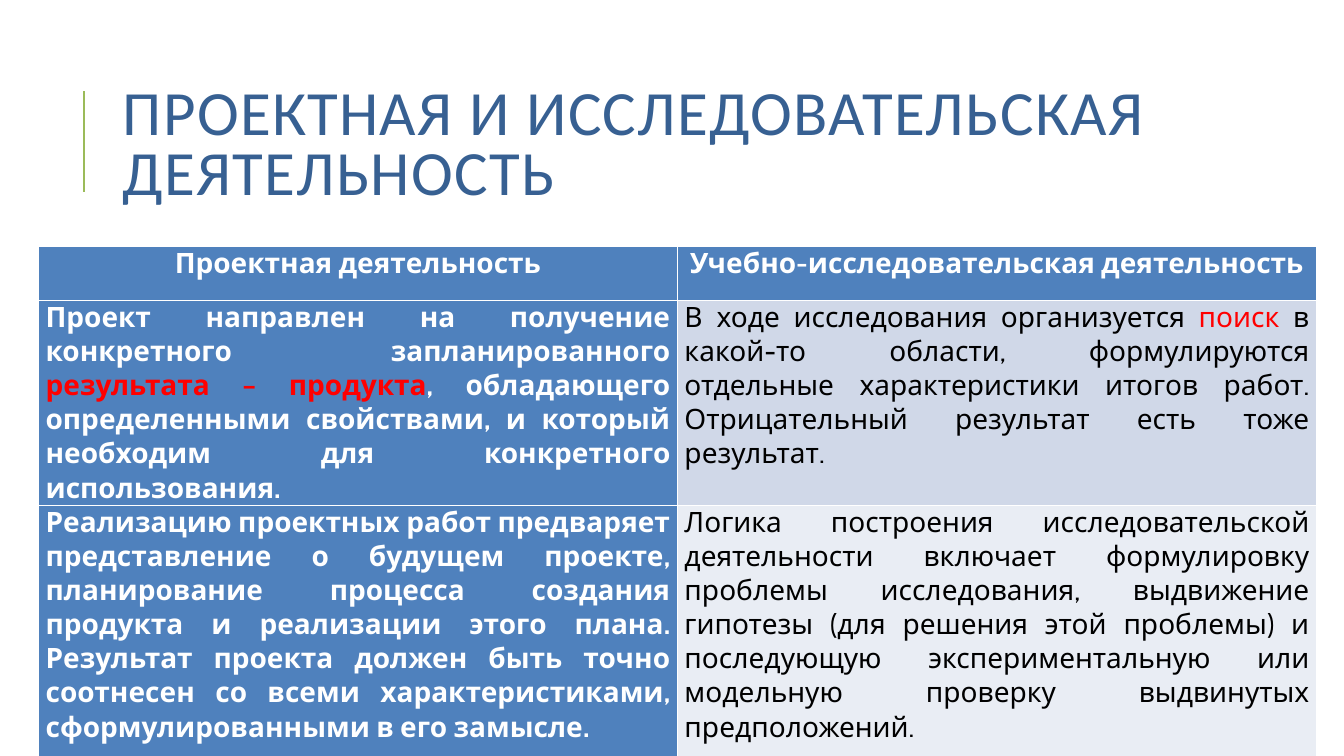
from lxml import etree
from pptx import Presentation
from pptx.dml.color import RGBColor
from pptx.enum.shapes import MSO_CONNECTOR
from pptx.enum.text import MSO_ANCHOR, MSO_AUTO_SIZE, PP_ALIGN
from pptx.oxml.ns import qn
from pptx.util import Cm, Pt

STRAIGHT = MSO_CONNECTOR.STRAIGHT
MIDDLE, TOP = MSO_ANCHOR.MIDDLE, MSO_ANCHOR.TOP
NO_AUTOFIT = MSO_AUTO_SIZE.NONE
LEFT, CENTER, JUSTIFY = PP_ALIGN.LEFT, PP_ALIGN.CENTER, PP_ALIGN.JUSTIFY

WHITE = RGBColor(0xFF, 0xFF, 0xFF)
BLACK = RGBColor(0, 0, 0)
RED = RGBColor(0xFF, 0, 0)
GREEN = RGBColor(0x9B, 0xBB, 0x59)
NAVY = RGBColor(0x37, 0x60, 0x92)
BLUE = RGBColor(0x4F, 0x81, 0xBD)
BAND_DARK = RGBColor(0xD0, 0xD8, 0xE8)
BAND_LIGHT = RGBColor(0xE9, 0xED, 0xF4)

TITLE = "ПРОЕКТНАЯ И ИССЛЕДОВАТЕЛЬСКАЯ ДЕЯТЕЛЬНОСТЬ"
HEADER = (["Проектная деятельность"], ["Учебно-исследовательская деятельность"])
COMPARISON = [
    (
        [
            "Проект направлен на получение конкретного запланированного ",
            ("результата – продукта", RED),
            ", обладающего определенными свойствами, и который необходим "
            "для конкретного использования.",
        ],
        [
            "В ходе исследования организуется ",
            ("поиск", RED),
            " в какой-то области, формулируются отдельные характеристики итогов работ. "
            "Отрицательный результат есть тоже результат.",
        ],
    ),
    (
        [
            "Реализацию проектных работ предваряет представление о будущем проекте, "
            "планирование процесса создания продукта и реализации этого плана. "
            "Результат проекта должен быть точно соотнесен со всеми характеристиками, "
            "сформулированными в его замысле.",
        ],
        [
            "Логика построения исследовательской деятельности включает формулировку "
            "проблемы исследования, выдвижение гипотезы (для решения этой проблемы) и "
            "последующую экспериментальную или модельную проверку выдвинутых предположений.",
        ],
    ),
]
ROW_HEIGHTS = (1.37, 4.11, 6.86)
COLUMN_WIDTH = 16.1


def apply(target, values):
    for name, value in values.items():
        setattr(target, name, value)


def add_run(paragraph, text, color, **font_values):
    run = paragraph.add_run()
    run.text = text
    apply(run.font, font_values)
    run.font.color.rgb = color
    return run


def add_title(slide):
    title = slide.shapes.title
    apply(title, {"left": Cm(2.84), "top": Cm(1.63), "width": Cm(27), "height": Cm(4.17)})
    apply(title.text_frame, {
        "word_wrap": True, "auto_size": NO_AUTOFIT, "vertical_anchor": MIDDLE,
    })
    paragraph = title.text_frame.paragraphs[0]
    apply(paragraph, {"alignment": LEFT, "line_spacing": 0.8})
    run = add_run(paragraph, TITLE, NAVY, name="Calibri", size=Pt(45))
    run.font._element.set("spc", "100")


def add_accent_line(slide):
    line = slide.shapes.add_connector(STRAIGHT, Cm(2.11), Cm(4.83), Cm(2.11), Cm(2.29))
    line.line.color.rgb = GREEN
    line.line.width = Pt(1.5)
    etree.SubElement(line._element.spPr, qn("a:effectLst"))


def fill_cell(cell, pieces, fill, color, bold, alignment):
    apply(cell, {
        "margin_left": Cm(0.18), "margin_right": Cm(0.18),
        "margin_top": 0, "margin_bottom": 0, "vertical_anchor": TOP,
    })
    cell.fill.solid()
    cell.fill.fore_color.rgb = fill
    paragraph = cell.text_frame.paragraphs[0]
    paragraph.alignment = alignment
    for piece in pieces:
        text, run_color = (piece, color) if isinstance(piece, str) else piece
        add_run(paragraph, text, run_color, name="Cabin", size=Pt(20), bold=bold)


def add_comparison_table(slide):
    rows = [HEADER, *COMPARISON]
    columns = len(HEADER)
    table = slide.shapes.add_table(
        len(rows), columns, Cm(0.97), Cm(6.2),
        Cm(COLUMN_WIDTH * columns), Cm(sum(ROW_HEIGHTS)),
    ).table
    table.first_col = True
    for column in table.columns:
        column.width = Cm(COLUMN_WIDTH)
    for row_index, (row, height) in enumerate(zip(rows, ROW_HEIGHTS)):
        table.rows[row_index].height = Cm(height)
        band = BAND_DARK if row_index % 2 else BAND_LIGHT
        alignment = JUSTIFY if row_index else CENTER
        for column_index, pieces in enumerate(row):
            heading = row_index == 0 or column_index == 0
            fill, color = (BLUE, WHITE) if heading else (band, BLACK)
            fill_cell(table.cell(row_index, column_index), pieces, fill, color, heading, alignment)


def main():
    presentation = Presentation()
    presentation.slide_width = Cm(33.87)
    presentation.slide_height = Cm(19.05)
    slide = presentation.slides.add_slide(presentation.slide_layouts[5])
    add_accent_line(slide)
    add_title(slide)
    add_comparison_table(slide)
    presentation.save("out.pptx")


if __name__ == "__main__":
    main()
